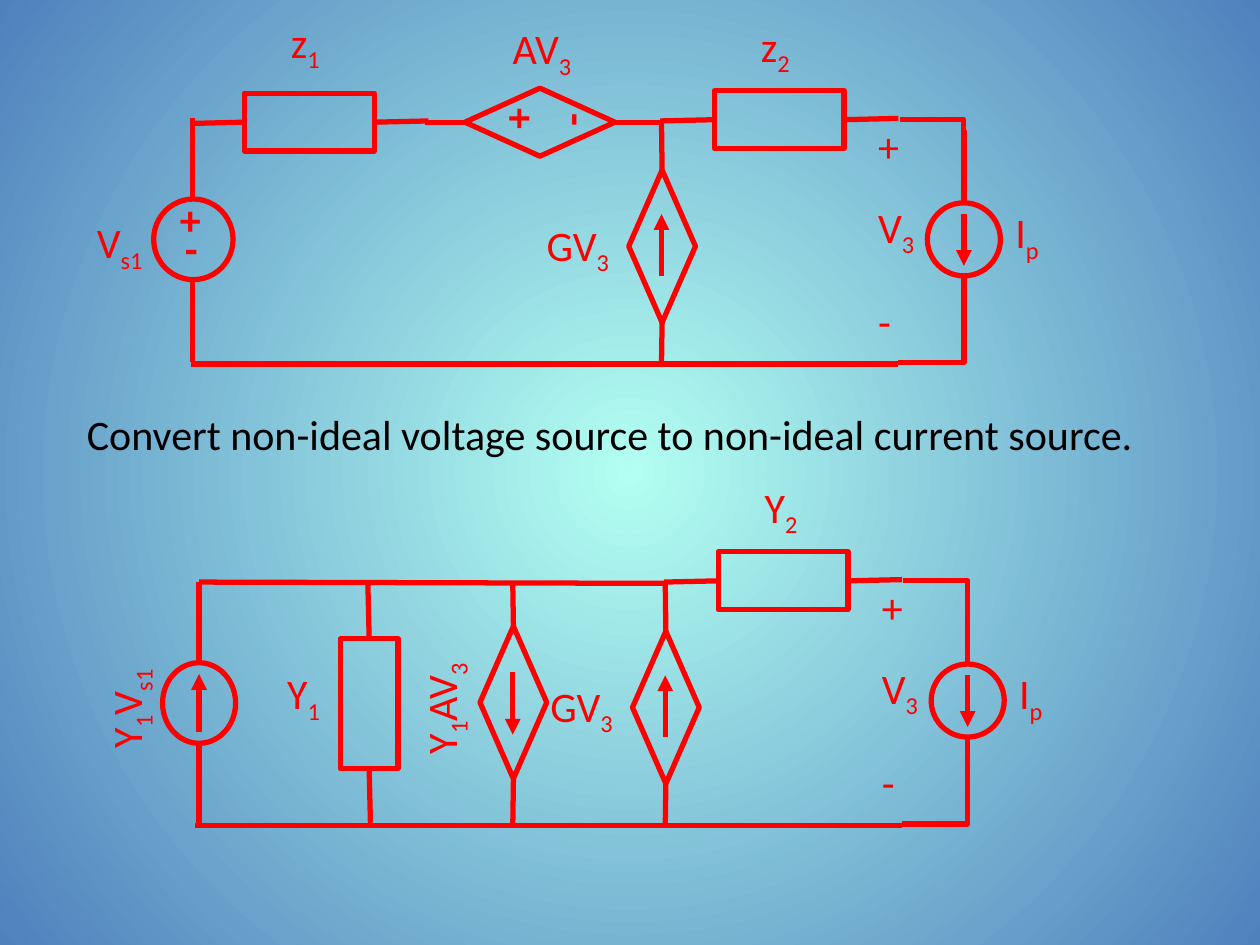
from lxml import etree
from pptx import Presentation, util as u
from pptx.dml.color import RGBColor
from pptx.enum import shapes, text
from pptx.oxml.ns import qn

COLORS = {"circuit": "FF0000", "text": "000000", "center": "B3FFF2", "edge": "4F81BD"}
FONT = {"name": "Calibri", "size": u.Pt(24)}
FRAME = {"auto_size": text.MSO_AUTO_SIZE.SHAPE_TO_FIT_TEXT, "vertical_anchor": text.MSO_ANCHOR.TOP}
SPACING = {"line_spacing": u.Pt(25), "space_before": u.Pt(25)}
RECT, DIAMOND, OVAL = (shapes.MSO_SHAPE.RECTANGLE, shapes.MSO_SHAPE.DIAMOND, shapes.MSO_SHAPE.OVAL)
TOP, LEFT, BOTTOM, RIGHT = range(4)


def wire(grp, ends, start=None, stop=None, arrow=False, bend=None):
    kind = shapes.MSO_CONNECTOR.STRAIGHT if bend is None else shapes.MSO_CONNECTOR.ELBOW
    c = grp.shapes.add_connector(kind, *[u.Inches(v) for v in ends])
    if start:
        c.begin_connect(*start)
    if stop:
        c.end_connect(*stop)
    c.line.width = u.Pt(3)
    c.line.color.rgb = RGBColor.from_string(COLORS["circuit"])
    pr = c._element.spPr
    if arrow:
        etree.SubElement(pr.find(qn("a:ln")), qn("a:tailEnd"), type="triangle")
    if bend is not None:
        av = pr.find(qn("a:prstGeom")).find(qn("a:avLst"))
        etree.SubElement(av, qn("a:gd"), name="adj1", fmla=f"val {bend}")
    etree.SubElement(pr, qn("a:effectLst"))


def label(owner, box, lines, rotation=0, bold=False, wrap=False, color="circuit"):
    sp = owner.shapes.add_textbox(*[u.Inches(v) for v in box])
    sp.rotation = rotation
    tf = sp.text_frame
    tf.word_wrap = wrap
    for name, value in FRAME.items():
        setattr(tf, name, value)
    for i, parts in enumerate(lines):
        p = tf.add_paragraph() if i else tf.paragraphs[0]
        if len(lines) > 1:
            for name, value in SPACING.items():
                setattr(p, name, value if i or name == "line_spacing" else u.Pt(0))
        for j, part in enumerate(parts):
            r = p.add_run()
            r.text = part
            for name, value in FONT.items():
                setattr(r.font, name, value)
            r.font.bold = bold
            r.font.color.rgb = RGBColor.from_string(COLORS[color])
            if j % 2:
                r._r.get_or_add_rPr().set("baseline", "-25000")


prs = Presentation()
prs.slide_width, prs.slide_height = u.Inches(10), u.Inches(7.5)
s = prs.slides.add_slide(prs.slide_layouts[6])
fill = s.background.fill
fill.gradient()
for stop, name in zip(fill.gradient_stops, ("center", "edge")):
    stop.color.rgb = RGBColor.from_string(COLORS[name])
    stop.position = 0 if name == "center" else 1
grad = s._element.find(".//" + qn("a:gradFill"))
grad.remove(grad.find(qn("a:lin")))
radial = etree.SubElement(grad, qn("a:path"), path="circle")
etree.SubElement(radial, qn("a:fillToRect"), l="50000", t="50000", r="50000", b="50000")

label(s, (0.59, 3.19, 8.58, 0.5),
      [["Convert non-ideal voltage source to non-ideal current source."]], color="text")

common = {
    "load": (RECT, 5.67, 0.72, 1.03, 0.46),
    "gain": (DIAMOND, 4.99, 1.35, 0.53, 1.21),
    "sink": (OVAL, 7.36, 1.61, 0.58, 0.58),
}
extras = [
    {"series": (RECT, 1.94, 0.74, 1.03, 0.46),
     "drop": (DIAMOND, 3.69, 0.7, 1.19, 0.54),
     "source": (OVAL, 1.22, 1.58, 0.63, 0.64)},
    {"shunt": (RECT, 2.7, 5.07, 0.46, 1.03),
     "drain": (DIAMOND, 3.81, 4.97, 0.53, 1.21),
     "source": (OVAL, 1.29, 5.26, 0.58, 0.64)},
]

groups, parts = [], {}
for (dx, dy), extra, letter in zip([(0, 0), (0.03, 3.66)], extras, "zY"):
    grp = s.shapes.add_group_shape()
    groups.append(grp)
    moved = {k: (g, x + dx, y + dy, w, h) for k, (g, x, y, w, h) in common.items()}
    for name, (kind, *box) in {**moved, **extra}.items():
        sp = grp.shapes.add_shape(kind, *[u.Inches(v) for v in box])
        sp.shadow.inherit = False
        sp.fill.background()
        sp.line.width = u.Pt(3)
        sp.line.color.rgb = RGBColor.from_string(COLORS["circuit"])
        parts[name] = sp
    load, gain = parts["load"], parts["gain"]
    for (x1, y1, x2, y2), opts in [
        ((6.7, 0.95, 7.13, 0.94), {"start": (load, RIGHT)}),
        ((5.24, 0.96, 5.67, 0.95), {"stop": (load, LEFT)}),
        ((5.25, 2.56, 5.25, 2.89), {"start": (gain, BOTTOM)}),
        ((5.25, 0.97, 5.25, 1.35), {"stop": (gain, TOP)}),
        ((5.25, 2.19, 5.25, 1.7), {"arrow": True}),
        ((1.52, 2.89, 7.13, 2.89), {}),
        ((7.65, 2.78, 7.65, 2.2), {}),
        ((7.65, 1.61, 7.65, 1.03), {}),
        ((7.65, 1.7, 7.65, 2.11), {"arrow": True}),
        ((7.13, 2.88, 7.65, 2.67), {"bend": 100000}),
        ((7.65, 1.12, 7.14, 0.95), {"bend": 0}),
    ]:
        wire(grp, (x1 + dx, y1 + dy, x2 + dx, y2 + dy), **opts)
    for (x, y, w, h), lines in [
        ((5.94, 0.11, 0.48, 0.55), [[letter, "2"]]),
        ((4.24, 1.69, 0.77, 0.55), [["GV", "3"]]),
        ((6.87, 0.96, 0.55, 2.04), [["+"], ["V", "3"], ["-"]]),
        ((7.96, 1.59, 0.4, 0.5), [["I", "p"]]),
    ]:
        label(grp, (x + dx, y + dy, w, h), lines)

voltage, current = groups
series, drop, shunt, drain = [parts[k] for k in ("series", "drop", "shunt", "drain")]
for grp, ends, opts in [
    (voltage, (3.69, 0.97, 3.37, 0.97), {"start": (drop, LEFT)}),
    (voltage, (5.25, 0.97, 4.88, 0.97), {"stop": (drop, RIGHT)}),
    (voltage, (1.53, 0.94, 1.53, 1.58), {}),
    (voltage, (1.53, 2.22, 1.53, 2.87), {}),
    (voltage, (2.97, 0.97, 3.4, 0.96), {"start": (series, RIGHT)}),
    (voltage, (1.51, 0.98, 1.94, 0.97), {"stop": (series, LEFT)}),
    (current, (2.93, 5.07, 2.92, 4.64), {"start": (shunt, TOP)}),
    (current, (2.94, 6.53, 2.93, 6.1), {"stop": (shunt, BOTTOM)}),
    (current, (4.07, 4.97, 4.07, 4.64), {"start": (drain, TOP)}),
    (current, (4.07, 6.56, 4.07, 6.18), {"stop": (drain, BOTTOM)}),
    (current, (4.07, 5.33, 4.07, 5.83), {"arrow": True}),
    (current, (1.58, 4.62, 1.58, 5.26), {}),
    (current, (1.58, 5.9, 1.58, 6.54), {}),
    (current, (1.58, 5.81, 1.58, 5.35), {"arrow": True}),
    (current, (5.28, 4.63, 1.58, 4.62), {}),
]:
    wire(grp, ends, **opts)

for grp, box, runs, opts in [
    (voltage, (3.9, 0.67, 0.41, 0.59), ["+"], {"rotation": 90, "bold": True}),
    (voltage, (4.38, 0.68, 0.34, 0.59), ["-"], {"rotation": 90, "bold": True}),
    (voltage, (1.33, 1.49, 0.4, 0.55), ["+"], {"bold": True}),
    (voltage, (1.37, 1.72, 0.33, 0.55), ["-"], {"bold": True}),
    (voltage, (0.67, 1.67, 0.63, 0.55), ["V", "s1"], {}),
    (voltage, (2.21, 0.08, 0.48, 0.55), ["z", "1"], {}),
    (voltage, (3.97, 0.13, 0.74, 0.55), ["AV", "3"], {}),
    (current, (0.51, 5.3, 0.97, 0.5), ["Y", "1", "V", "s1"], {"rotation": 270, "wrap": True}),
    (current, (2.18, 5.25, 0.48, 0.5), ["Y", "1"], {}),
    (current, (3, 5.34, 0.99, 0.5), ["Y", "1", "AV", "3"], {"rotation": 270, "wrap": True}),
]:
    label(grp, box, [runs], **opts)

prs.save("out.pptx")
